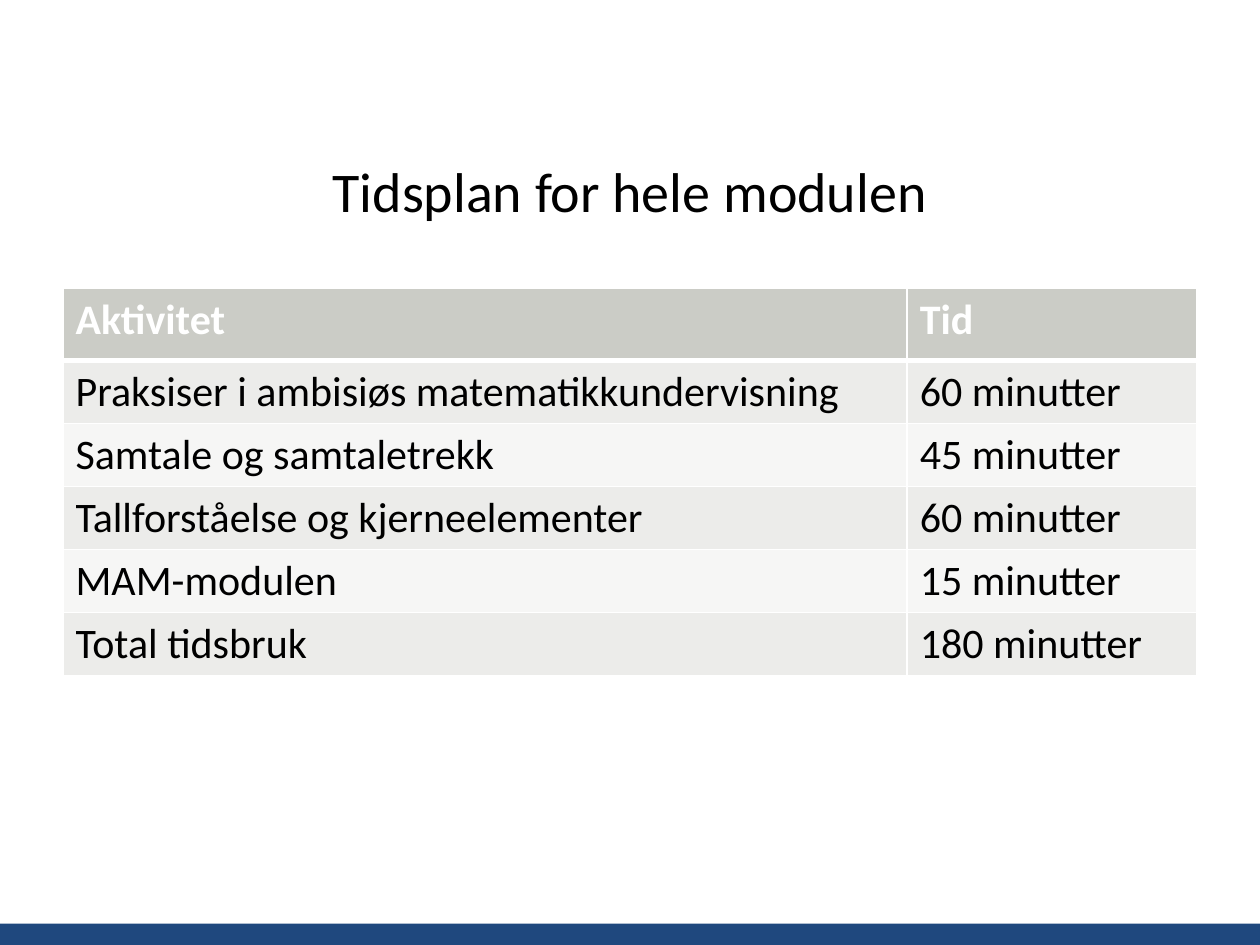
from lxml import etree
from pptx import Presentation
from pptx.dml.color import RGBColor
from pptx.enum.shapes import MSO_SHAPE
from pptx.enum.text import MSO_ANCHOR, PP_ALIGN
from pptx.oxml.ns import qn
from pptx.util import Inches, Pt

RECT = MSO_SHAPE.RECTANGLE
MIDDLE = MSO_ANCHOR.MIDDLE
CENTER = PP_ALIGN.CENTER

COLUMNS, ROWS = 20, 15
UNIT = Inches(0.5)

COLORS = {
    "text": "000000",
    "white": "FFFFFF",
    "footer": "1F487E",
    "header": "CBCCC6",
    "odd": "ECECEA",
    "even": "F6F6F5",
}
FORMATS = {
    "title": {"name": "Calibri", "size": Pt(32), "bold": False},
    "header": {"name": "Calibri", "size": Pt(24), "bold": True},
    "body": {"name": "Calibri", "size": Pt(24), "bold": False},
}
SCHEDULE = [
    ("Aktivitet", "Tid"),
    ("Praksiser i ambisiøs matematikkundervisning", "60 minutter"),
    ("Samtale og samtaletrekk", "45 minutter"),
    ("Tallforståelse og kjerneelementer", "60 minutter"),
    ("MAM-modulen", "15 minutter"),
    ("Total tidsbruk", "180 minutter"),
]


def rgb(name):
    return RGBColor.from_string(COLORS[name])


def grid(*cells):
    """Turn grid columns or rows into lengths."""
    return [round(n * UNIT) for n in cells]


class SlideBuilder:
    """Draws on one slide, with positions in grid columns and rows."""

    def __init__(self, prs):
        self.s = prs.slides.add_slide(prs.slide_layouts[6])

    def add_text(self, tf, text, style, color):
        p = tf.paragraphs[0]
        r = p.add_run()
        r.text = text
        for key, value in FORMATS[style].items():
            setattr(r.font, key, value)
        r.font.color.rgb = rgb(color)
        return p

    def bar(self, box, color):
        sp = self.s.shapes.add_shape(RECT, *grid(*box))
        sp.shadow.inherit = False
        sp.fill.solid()
        sp.fill.fore_color.rgb = rgb(color)
        sp.line.fill.background()

    def title(self, box, text):
        tf = self.s.shapes.add_textbox(*grid(*box)).text_frame
        tf.word_wrap = True
        tf.vertical_anchor = MIDDLE
        self.add_text(tf, text, "title", "text").alignment = CENTER

    def border(self, cell, side, width):
        tc_pr = cell._tc.get_or_add_tcPr()
        ln = etree.SubElement(tc_pr, qn(f"a:ln{side}"), w=str(Pt(width)))
        fill = etree.SubElement(ln, qn("a:solidFill"))
        etree.SubElement(fill, qn("a:srgbClr"), val=COLORS["white"])

    def cell(self, cell, text, row):
        """Style by row: header, then alternating bands."""
        header = row == 0
        widths = {"L": 1, "R": 1, "T": 3 if row == 1 else 1, "B": 3 if header else 1}
        for side, width in widths.items():
            self.border(cell, side, width)
        cell.fill.solid()
        cell.fill.fore_color.rgb = rgb("header" if header else ("even", "odd")[row % 2])
        style, color = ("header", "white") if header else ("body", "text")
        self.add_text(cell.text_frame, text, style, color)

    def table(self, left, top, widths, heights, rows):
        box = grid(left, top, sum(widths), sum(heights))
        table = self.s.shapes.add_table(len(rows), len(widths), *box).table
        for column, width in zip(table.columns, grid(*widths)):
            column.width = width
        for i, (row, height) in enumerate(zip(rows, grid(*heights))):
            table.rows[i].height = height
            for j, text in enumerate(row):
                self.cell(table.cell(i, j), text, i)


def main():
    prs = Presentation()
    prs.slide_width, prs.slide_height = grid(COLUMNS, ROWS)
    slide = SlideBuilder(prs)
    slide.bar((0, ROWS - 0.34, COLUMNS, 0.34), "footer")
    slide.title((1, 2, COLUMNS - 2, 2.02), "Tidsplan for hele modulen")
    heights = [1.14] + [1] * (len(SCHEDULE) - 1)
    slide.table(1, 4.58, (13.4, 4.6), heights, SCHEDULE)
    prs.save("out.pptx")


if __name__ == "__main__":
    main()
